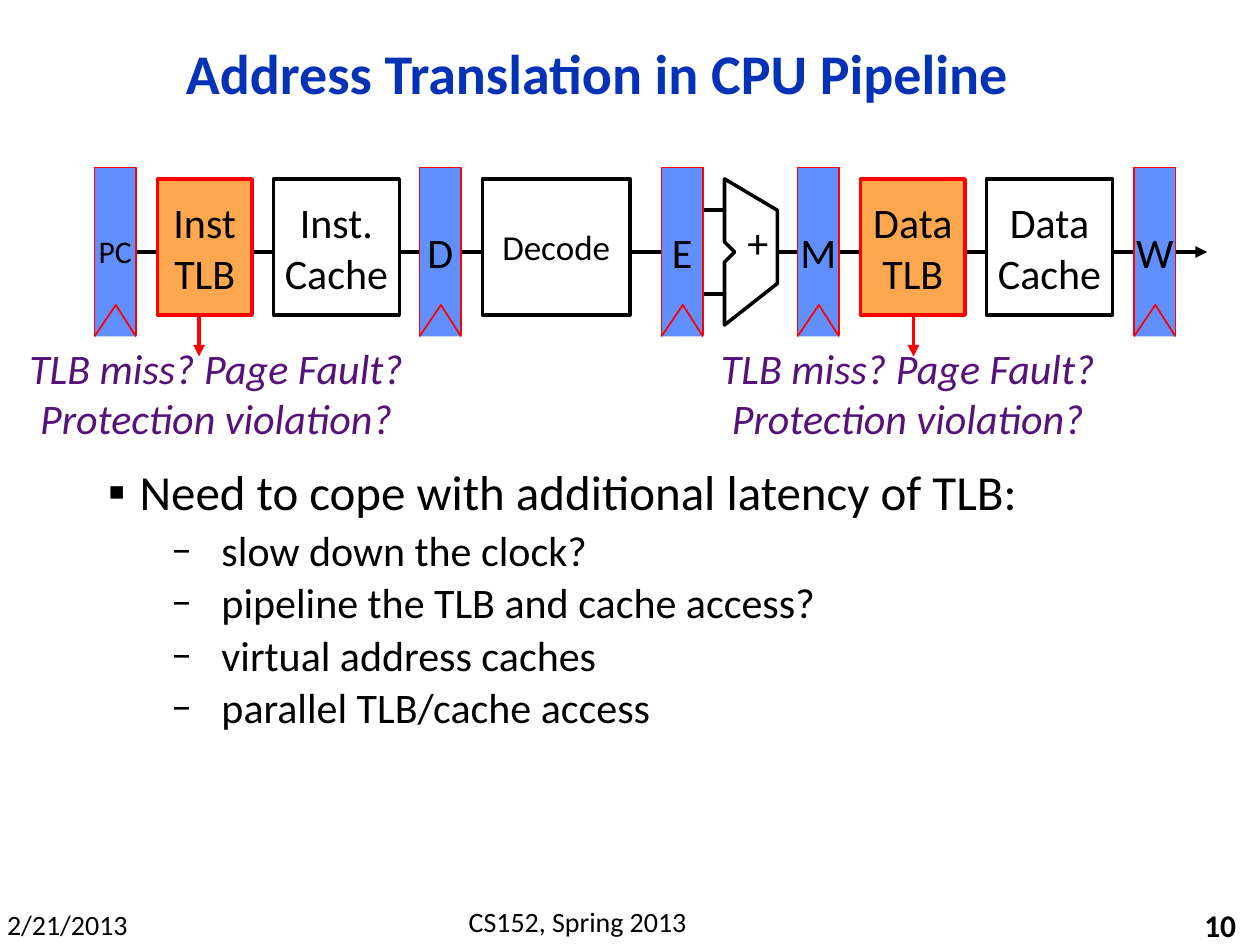
from pptx import Presentation, util as u
from pptx.dml.color import RGBColor
from pptx.enum import shapes, text
from pptx.oxml import parse_xml
from pptx.oxml.ns import nsdecls

THEME = dict(
    font="Calibri", black="000000", white="FFFFFF", red="FF0000", blue="618FFD",
    orange="FFA74F", title="0332B7", note="56127A",
    head=32, point=28, body=24, stage=20, small=18, foot=16,
)
MID, TOP = text.MSO_ANCHOR.MIDDLE, text.MSO_ANCHOR.TOP
LEFT, MIDDLE, RIGHT = text.PP_ALIGN.LEFT, text.PP_ALIGN.CENTER, text.PP_ALIGN.RIGHT

deck = Presentation()
deck.slide_width, deck.slide_height = u.Inches(10), u.Inches(7.5)
slide = deck.slides.add_slide(deck.slide_layouts[6])
tree = slide.shapes


def write(box, lines, size="body", color="black", wrap=True, anchor=MID,
          align=MIDDLE, inset=0.1, **style):
    frame = box.text_frame
    frame.text = "\n".join(lines)
    side, edge = u.Inches(inset), u.Inches(inset / 2)
    form = dict(word_wrap=wrap, vertical_anchor=anchor, margin_left=side,
                margin_right=side, margin_top=edge, margin_bottom=edge)
    for name, value in form.items():
        setattr(frame, name, value)
    for para in frame.paragraphs:
        para.alignment = align
        font = para.runs[0].font
        font.color.rgb = RGBColor.from_string(THEME[color])
        look = dict(name=THEME["font"], size=u.Pt(THEME[size]), **style)
        for name, value in look.items():
            setattr(font, name, value)
    return frame


def paint(shape, fill, line, width):
    shape.shadow.inherit = False
    shape.fill.solid()
    shape.fill.fore_color.rgb = RGBColor.from_string(THEME[fill])
    shape.line.color.rgb = RGBColor.from_string(THEME[line])
    shape.line.width = u.Pt(width)
    return shape


labels = [
    ((-0.05, 7.15, 1.17, 0.37), ["2/21/2013"],
     dict(size="foot", wrap=False, anchor=TOP)),
    ((2.92, 7.13, 3.33, 0.37), ["CS152, Spring 2013"],
     dict(size="foot", anchor=TOP)),
    ((0.75, 0.17, 7.98, 0.81), ["Address Translation in CPU Pipeline"],
     dict(size="head", color="title", bold=True)),
    ((7.83, 7.18, 2.08, 0.32), ["10"],
     dict(size="small", wrap=False, align=RIGHT, bold=True)),
]
for area, lines, form in labels:
    write(tree.add_textbox(*map(u.Inches, area)), lines, **form)

points = [
    "Need to cope with additional latency of TLB:",
    "slow down the clock?",
    "pipeline the TLB and cache access?",
    "virtual address caches",
    "parallel TLB/cache access",
]
box = tree.add_textbox(*map(u.Inches, (0.76, 3.67, 8.4, 3.03)))
frame = write(box, points, anchor=TOP, align=LEFT)
for rank, para in enumerate(frame.paragraphs):
    mark, left, hang, pitch, gap = ("–", 0.9, 0.4, 0.8, 7) if rank else ("▪", 0.25, 0.25, 0.9, 0)
    para.level = min(rank, 1)
    para.line_spacing, para.space_before = pitch, u.Pt(gap)
    props = para._p.get_or_add_pPr()
    props.set("marL", str(u.Inches(left)))
    props.set("indent", str(-u.Inches(hang)))
    props.append(parse_xml(f'<a:buFont {nsdecls("a")} typeface="{THEME["font"]}"/>'))
    props.append(parse_xml(f'<a:buChar {nsdecls("a")} char="{mark}"/>'))
frame.paragraphs[0].runs[0].font.size = u.Pt(THEME["point"])

wires = [
    (6.17, 2, 9.58, 2, "black", True),
    (1.08, 2, 5.25, 2, "black", False),
    (5.58, 1.67, 5.75, 1.67, "black", False),
    (5.58, 2.33, 5.75, 2.33, "black", False),
    (1.58, 2.5, 1.58, 2.83, "red", True),
    (7.25, 2.5, 7.25, 2.83, "red", True),
]
for *ends, color, arrow in wires:
    wire = tree.add_connector(shapes.MSO_CONNECTOR.STRAIGHT, *map(u.Inches, ends))
    wire.line.color.rgb = RGBColor.from_string(THEME[color])
    wire.line.width = u.Pt(2.25)
    if arrow:
        wire.line._get_or_add_ln().append(
            parse_xml(f'<a:tailEnd {nsdecls("a")} type="triangle"/>'))
    wire._element.spPr.append(parse_xml(f'<a:effectLst {nsdecls("a")}/>'))

stages = [
    (1.25, 0.75, ["Inst", "TLB"], "orange", "red", "body"),
    (2.17, 1, ["Inst.", "Cache"], "white", "black", "body"),
    (3.83, 1.17, ["Decode"], "white", "black", "stage"),
    (6.83, 0.83, ["Data", "TLB"], "orange", "red", "body"),
    (7.83, 1, ["Data", "Cache"], "white", "black", "body"),
]
for left, width, words, fill, line, size in stages:
    area = map(u.Inches, (left, 1.42, width, 1.08))
    block = paint(tree.add_shape(shapes.MSO_SHAPE.RECTANGLE, *area), fill, line, 2)
    write(block, [" ".join(words)], size, inset=0)

for name, left in dict(PC=0.75, D=3.33, E=5.25, M=6.33, W=9).items():
    area = map(u.Inches, (left, 1.33, 0.33, 1.33))
    latch = paint(tree.add_shape(shapes.MSO_SHAPE.RECTANGLE, *area), "blue", "red", 1)
    write(latch, [name], "small" if name == "PC" else "body", wrap=False)
    clock = tree.build_freeform(u.Inches(left), u.Inches(2.67))
    tip = [(left + 0.17, 2.42), (left + 0.33, 2.67)]
    clock.add_line_segments([(u.Inches(x), u.Inches(y)) for x, y in tip], close=False)
    paint(clock.convert_to_shape(), "blue", "red", 1)

rim = [(5.75, 1.92), (5.83, 2), (5.75, 2.08), (5.75, 2.58), (6.17, 2.25), (6.17, 1.67)]
adder = tree.build_freeform(u.Inches(5.75), u.Inches(1.42))
adder.add_line_segments([(u.Inches(x), u.Inches(y)) for x, y in rim])
paint(adder.convert_to_shape(), "white", "black", 2)
write(tree.add_textbox(*map(u.Inches, (5.83, 1.67, 0.37, 0.5))), ["+"], wrap=False)

faults = ["TLB miss? Page Fault?", "Protection violation?"]
for left in (0.07, 5.56):
    box = tree.add_textbox(*map(u.Inches, (left, 2.66, 3.29, 0.91)))
    write(box, faults, color="note", wrap=False, italic=True)

deck.save("out.pptx")
